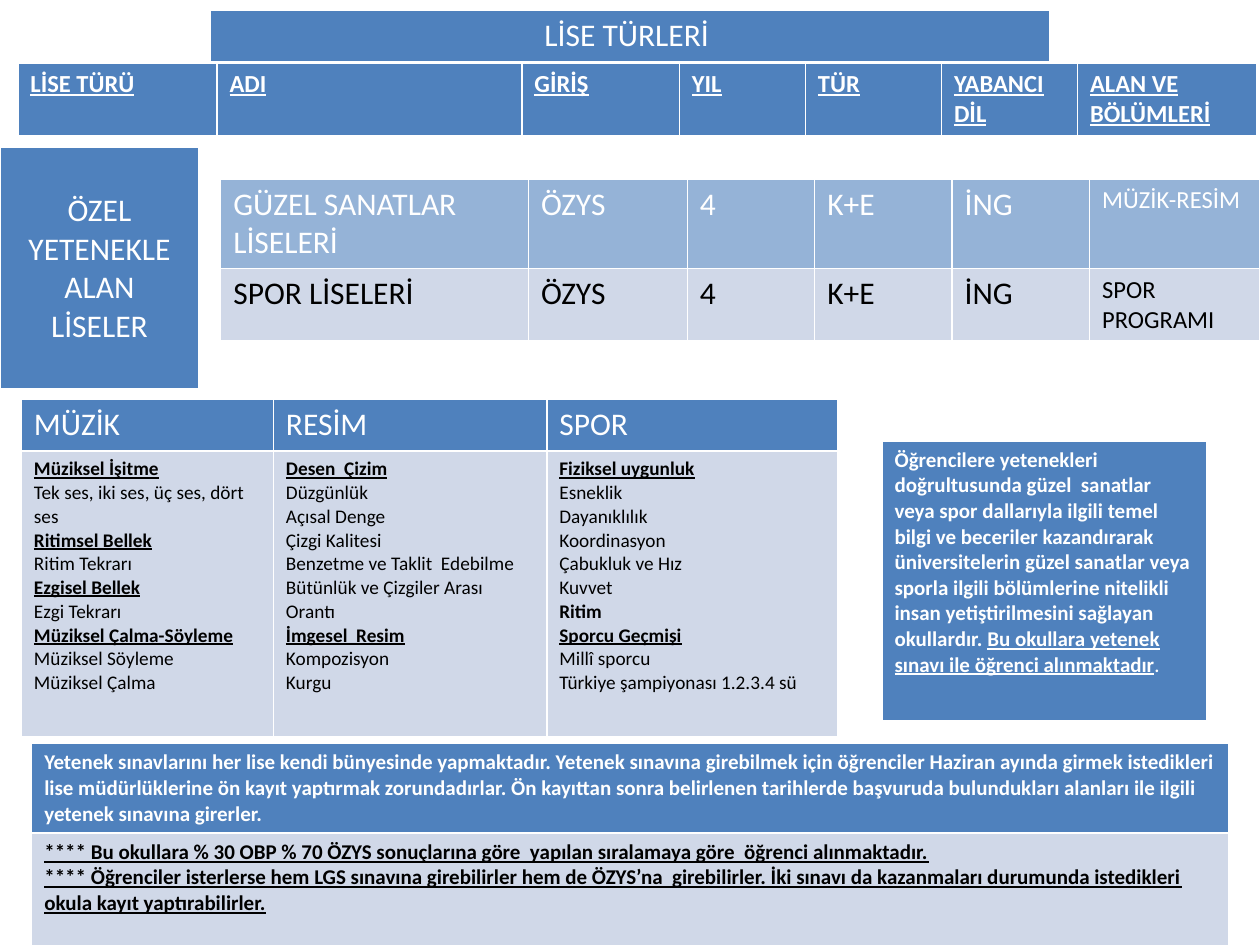
from pptx import Presentation
from pptx.dml.color import RGBColor
from pptx.enum.text import PP_ALIGN
from pptx.util import Cm, Pt

CENTER = PP_ALIGN.CENTER
BLUE = RGBColor(0x4F, 0x81, 0xBD)
MID_BLUE = RGBColor(0x95, 0xB3, 0xD7)
PALE_BLUE = RGBColor(0xD0, 0xD8, 0xE8)
WHITE = RGBColor(0xFF, 0xFF, 0xFF)
BLACK = RGBColor(0, 0, 0)

HEADING = {"bold": True, "underline": True}


def add_grid(slide, box, widths, heights):
    """Add a table at box (left, top, width, height in cm); widths and heights are shares."""
    x, y, w, h = box
    table = slide.shapes.add_table(len(heights), len(widths), *map(Cm, box)).table
    table.horz_banding = False
    for col, share in zip(table.columns, widths):
        col.width = Cm(w * share / sum(widths))
    for row, share in zip(table.rows, heights):
        row.height = Cm(h * share / sum(heights))
    return table


def fill_cell(cell, paragraphs, fill, color, size, align=None, **fmt):
    """Write paragraphs, each a list of (text, font overrides) runs."""
    cell.fill.solid()
    cell.fill.fore_color.rgb = fill
    tf = cell.text_frame
    for i, runs in enumerate(paragraphs):
        p = tf.add_paragraph() if i else tf.paragraphs[0]
        p.alignment = align
        for text, own in runs:
            r = p.add_run()
            r.text = text
            r.font.color.rgb = color
            values = {"name": "Calibri", "size": Pt(size), "bold": False, **fmt, **own}
            for name, value in values.items():
                setattr(r.font, name, value)


def plain(*lines):
    return [[(line, {})] for line in lines]


def add_banner(slide, box):
    cell = add_grid(slide, box, [1], [1]).cell(0, 0)
    fill_cell(cell, plain("LİSE TÜRLERİ "), BLUE, WHITE, 18, CENTER)


def add_column_heads(slide, box):
    heads = ["LİSE TÜRÜ", "ADI", "GİRİŞ", "YIL", "TÜR", "YABANCI DİL",
             "ALAN VE BÖLÜMLERİ"]
    table = add_grid(slide, box, [1.58, 2.42, 1.25, 1, 1.08, 1.08, 1.42], [1])
    for cell, head in zip(table.iter_cells(), heads):
        fill_cell(cell, plain(head), BLUE, WHITE, 14, **HEADING)


def add_school_group(slide, box):
    cell = add_grid(slide, box, [1], [1]).cell(0, 0)
    cell.margin_top = Cm(0.9)
    fill_cell(cell, plain("ÖZEL YETENEKLE ALAN LİSELER"), BLUE, WHITE, 18, CENTER)


def add_schools(slide, box):
    common = ["ÖZYS", "4", "K+E", "İNG"]
    rows = [
        (["GÜZEL SANATLAR LİSELERİ", *common, "MÜZİK-RESİM"], MID_BLUE, WHITE),
        (["SPOR LİSELERİ", *common, "SPOR PROGRAMI"], PALE_BLUE, BLACK),
    ]
    table = add_grid(slide, box, [2.44, 1.26, 1.01, 1.09, 1.09, 1.35], [0.7, 0.57])
    for i, (texts, fill, color) in enumerate(rows):
        for j, text in enumerate(texts):
            size = 14 if j == len(texts) - 1 else 18
            fill_cell(table.cell(i, j), plain(text), fill, color, size)


def add_criteria(slide, box):
    criteria = {
        "MÜZİK": ["Müziksel İşitme", "Tek ses, iki ses, üç ses, dört ses",
                  "Ritimsel Bellek", "Ritim Tekrarı", "Ezgisel Bellek",
                  "Ezgi Tekrarı", "Müziksel Çalma-Söyleme",
                  "Müziksel Söyleme", "Müziksel Çalma"],
        "RESİM": ["Desen  Çizim", "Düzgünlük", "Açısal Denge", "Çizgi Kalitesi",
                  "Benzetme ve Taklit  Edebilme",
                  "Bütünlük ve Çizgiler Arası Orantı", "İmgesel  Resim",
                  "Kompozisyon", "Kurgu"],
        "SPOR": ["Fiziksel uygunluk", "Esneklik", "Dayanıklılık", "Koordinasyon",
                 "Çabukluk ve Hız", "Kuvvet", "Ritim", "Sporcu Geçmişi",
                 "Millî sporcu", "Türkiye şampiyonası 1.2.3.4 sü"],
    }
    headings = {"Müziksel İşitme", "Ritimsel Bellek", "Ezgisel Bellek",
                "Müziksel Çalma-Söyleme", "Desen  Çizim", "İmgesel  Resim",
                "Fiziksel uygunluk", "Sporcu Geçmişi"}
    formats = {**dict.fromkeys(headings, HEADING), "Ritim": {"bold": True}}
    table = add_grid(slide, box, [2, 2.17, 2.31], [0.41, 2.27])
    for j, (field, lines) in enumerate(criteria.items()):
        fill_cell(table.cell(0, j), plain(field), BLUE, WHITE, 18)
        paragraphs = [[(line, formats.get(line, {}))] for line in lines]
        fill_cell(table.cell(1, j), paragraphs, PALE_BLUE, BLACK, 11)


def add_purpose(slide, box):
    runs = [
        ("Öğrencilere yetenekleri doğrultusunda güzel  sanatlar veya spor "
         "dallarıyla ilgili temel bilgi ve beceriler kazandırarak "
         "üniversitelerin güzel sanatlar veya sporla ilgili bölümlerine "
         "nitelikli insan yetiştirilmesini sağlayan okullardır. ", {}),
        ("Bu okullara yetenek sınavı ile öğrenci alınmaktadır", HEADING),
        (".", {"size": Pt(10)}),
    ]
    cell = add_grid(slide, box, [1], [1]).cell(0, 0)
    fill_cell(cell, [runs], BLUE, WHITE, 12, bold=True)


def add_exam_notes(slide, box):
    table = add_grid(slide, box, [1], [0.7, 0.9])
    rule = plain(
        "Yetenek sınavlarını her lise kendi bünyesinde yapmaktadır. Yetenek "
        "sınavına girebilmek için öğrenciler Haziran ayında girmek istedikleri "
        "lise müdürlüklerine ön kayıt yaptırmak zorundadırlar. Ön kayıttan sonra "
        "belirlenen tarihlerde başvuruda bulundukları alanları ile ilgili "
        "yetenek sınavına girerler.")
    notes = plain(
        "**** Bu okullara % 30 OBP % 70 ÖZYS sonuçlarına göre  yapılan "
        "sıralamaya göre  öğrenci alınmaktadır.",
        "**** Öğrenciler isterlerse hem LGS sınavına girebilirler hem de "
        "ÖZYS’na  girebilirler. İki sınavı da kazanmaları durumunda "
        "istedikleri okula kayıt yaptırabilirler.")
    fill_cell(table.cell(0, 0), rule, BLUE, WHITE, 12, bold=True)
    fill_cell(table.cell(1, 0), notes, PALE_BLUE, BLACK, 12, **HEADING)


def main():
    prs = Presentation()
    prs.slide_width, prs.slide_height = Cm(25.4), Cm(19.05)
    slide = prs.slides.add_slide(prs.slide_layouts[6])
    add_banner(slide, (4.24, 0.2, 16.93, 1.04))
    add_column_heads(slide, (0.36, 1.27, 24.97, 1.45))
    add_school_group(slide, (0, 2.97, 4.01, 4.87))
    add_schools(slide, (4.45, 3.61, 20.95, 3.23))
    add_criteria(slide, (0.43, 8.05, 16.46, 6.8))
    add_purpose(slide, (17.78, 8.89, 6.55, 5.64))
    add_exam_notes(slide, (0.64, 14.99, 24.13, 4.06))
    prs.save("out.pptx")


if __name__ == "__main__":
    main()
